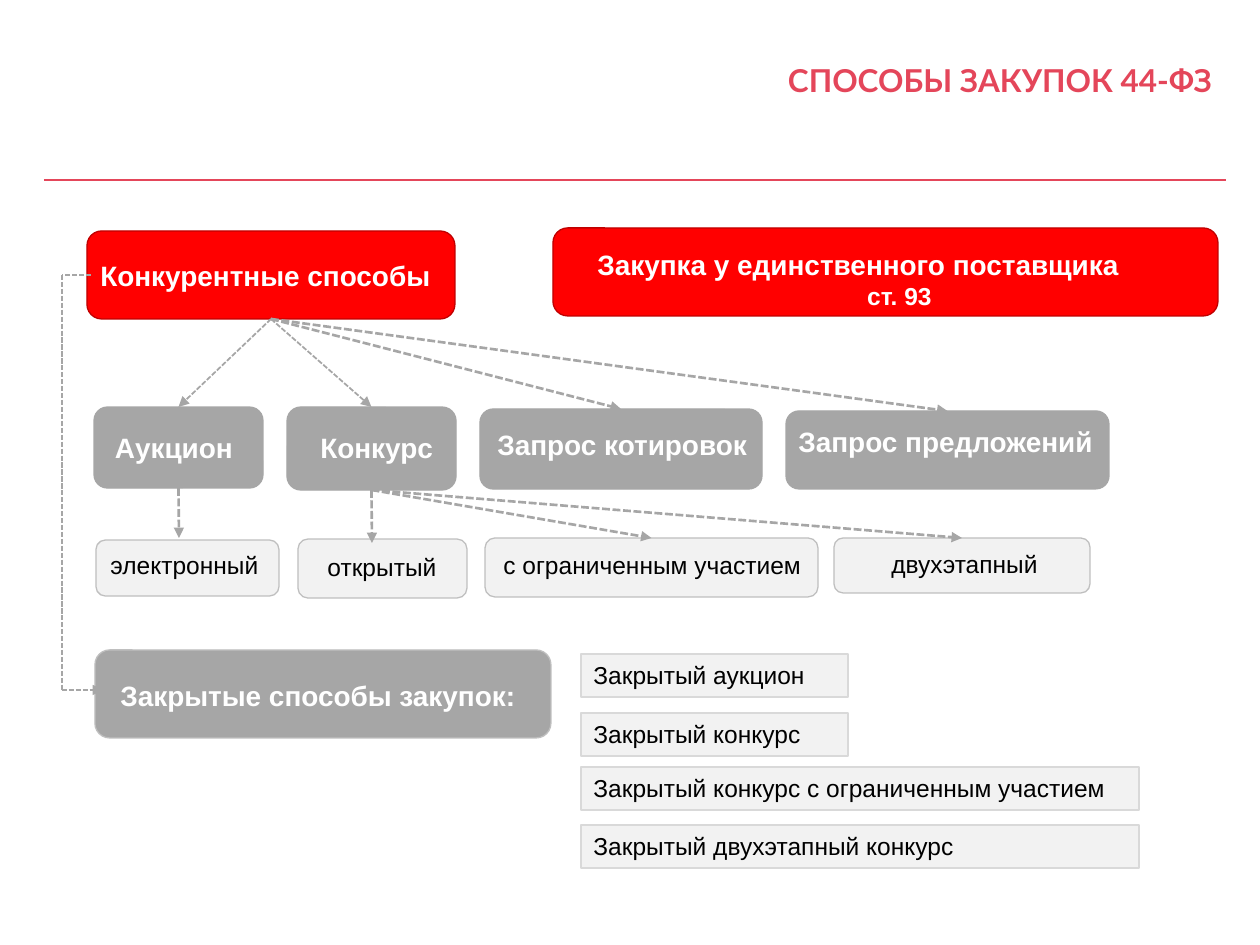
from dataclasses import dataclass
from typing import Optional

from lxml.etree import SubElement
from pptx import Presentation
from pptx.dml.color import RGBColor
from pptx.enum.dml import MSO_LINE_DASH_STYLE as DASH
from pptx.enum.shapes import MSO_CONNECTOR as CONN, MSO_SHAPE as SHAPE
from pptx.enum.text import MSO_ANCHOR as ANCHOR, PP_ALIGN as ALIGN
from pptx.oxml.ns import qn
from pptx.util import Emu, Pt

PX_PER_INCH = 126
COLORS = {
    "accent": "E4465A", "red": "FF0000", "dark_red": "C00000",
    "gray": "A6A6A6", "light": "F2F2F2", "edge": "BFBFBF",
    "pale_edge": "D9D9D9", "white": "FFFFFF", "black": "000000",
}
HEAD = {"name": "Arial", "size": Pt(16), "bold": True}
PLAIN = {"name": "Arial", "size": Pt(14), "bold": False}
TITLE = {"name": "Lato", "size": Pt(18), "bold": True}
TOP, LEFT, BOTTOM = 0, 1, 2

Rect = tuple[int, int, int, int]
Point = tuple[int, int]


@dataclass(frozen=True)
class Style:
    fill: str
    line: str
    color: str
    font: dict


RED = Style("red", "dark_red", "white", HEAD)
GRAY = Style("gray", "gray", "white", HEAD)
CLOSED = Style("gray", "edge", "white", HEAD)
LIGHT = Style("light", "edge", "black", PLAIN)
ITEM = Style("light", "pale_edge", "black", PLAIN)


@dataclass(frozen=True)
class Box:
    key: str
    text: str
    rect: Rect
    label: Rect
    style: Style
    align: ALIGN = ALIGN.LEFT
    note: str = ""


@dataclass(frozen=True)
class Link:
    """An end is either a point or the (key, side) of a box."""
    start: tuple
    end: tuple
    width: float = 1.5
    arrow: bool = True


BOXES = [
    Box("competitive", "Конкурентные способы", (87, 231, 368, 88), (88, 252, 367, 47), RED),
    Box("single", "Закупка у единственного поставщика", (553, 228, 665, 88),
        (585, 241, 629, 76), RED, note="ст. 93"),
    Box("auction", "Аукцион", (94, 407, 169, 81), (97, 424, 154, 47), GRAY, ALIGN.CENTER),
    Box("contest", "Конкурс", (287, 407, 169, 83), (308, 424, 149, 47), GRAY),
    Box("quotes", "Запрос котировок", (480, 409, 282, 80), (485, 421, 287, 47), GRAY),
    Box("proposals", "Запрос предложений", (786, 411, 323, 78), (786, 418, 323, 47), GRAY),
    Box("electronic", "электронный", (96, 540, 183, 56), (98, 544, 179, 44), LIGHT),
    Box("open", "открытый", (298, 539, 169, 59), (315, 546, 135, 42), LIGHT),
    Box("limited", "с ограниченным участием", (485, 538, 333, 59), (491, 544, 325, 43), LIGHT),
    Box("two_stage", "двухэтапный", (834, 538, 256, 55), (879, 543, 181, 43), LIGHT),
    Box("closed", "Закрытые способы закупок:", (95, 650, 456, 88), (108, 672, 433, 47), CLOSED),
]
CLOSED_ITEMS = [
    ("Закрытый аукцион", 654, 267),
    ("Закрытый конкурс", 713, 267),
    ("Закрытый конкурс с ограниченным участием", 767, 558),
    ("Закрытый двухэтапный конкурс", 825, 558),
]
LINKS = [
    Link(("competitive", BOTTOM), ("auction", TOP), 1),
    Link(("competitive", BOTTOM), ("contest", TOP), 1),
    Link(("competitive", BOTTOM), ("quotes", TOP)),
    Link(("competitive", BOTTOM), ("proposals", TOP)),
    Link(("auction", BOTTOM), (179, 538)),
    Link(("contest", BOTTOM), (372, 543)),
    Link(("contest", BOTTOM), ("limited", TOP)),
    Link(("contest", BOTTOM), ("two_stage", TOP)),
    Link((91, 275), (62, 275), 1, False),
    Link((62, 275), (62, 690), 1, False),
    Link((62, 690), (103, 690), 1),
]


def px(n: int) -> Emu:
    return Emu(round(n * 914400 / PX_PER_INCH))


def rgb(name: str) -> RGBColor:
    return RGBColor.from_string(COLORS[name])


def write(tf, text: str, font: dict, color: str, align=ALIGN.LEFT, first: bool = True):
    """Write one paragraph, the first of the frame or a further one."""
    tf.word_wrap = True
    tf.vertical_anchor = ANCHOR.TOP
    p = tf.paragraphs[0] if first else tf.add_paragraph()
    p.alignment = align
    r = p.add_run()
    r.text = text
    for attr, value in font.items():
        setattr(r.font, attr, value)
    r.font.color.rgb = rgb(color)
    return p


def add_panel(s, kind: SHAPE, rect: Rect, fill: str, line: Optional[str] = None):
    sp = s.shapes.add_shape(kind, *map(px, rect))
    sp.shadow.inherit = False
    sp.fill.solid()
    sp.fill.fore_color.rgb = rgb(fill)
    if line:
        sp.line.color.rgb = rgb(line)
        sp.line.width = Pt(0.75)
    else:
        sp.line.fill.background()
    return sp


def add_box(s, box: Box):
    style = box.style
    sp = add_panel(s, SHAPE.ROUNDED_RECTANGLE, box.rect, style.fill, style.line)
    tf = s.shapes.add_textbox(*map(px, box.label)).text_frame
    write(tf, box.text, style.font, style.color, box.align)
    if box.note:
        write(tf, box.note, {**style.font, "size": Pt(14)}, style.color, ALIGN.CENTER, False)
    return sp


def add_line(s, start: Point, end: Point, color: str, width: float):
    cn = s.shapes.add_connector(CONN.STRAIGHT, *map(px, start + end))
    cn.line.color.rgb = rgb(color)
    cn.line.width = Pt(width)
    SubElement(cn._element.spPr, qn("a:effectLst"))
    return cn


def add_link(s, link: Link, shapes: dict) -> None:
    points = [(0, 0) if end[0] in shapes else end for end in (link.start, link.end)]
    cn = add_line(s, *points, "gray", link.width)
    for end, connect in ((link.start, cn.begin_connect), (link.end, cn.end_connect)):
        if end[0] in shapes:
            connect(shapes[end[0]], end[1])
    cn.line.dash_style = DASH.SQUARE_DOT
    if link.arrow:
        SubElement(cn.line._get_or_add_ln(), qn("a:tailEnd"), type="triangle")


def main() -> None:
    prs = Presentation()
    prs.slide_width, prs.slide_height = px(1260), px(945)
    s = prs.slides.add_slide(prs.slide_layouts[6])

    add_line(s, (44, 180), (1226, 180), "accent", 1.5)
    title = add_panel(s, SHAPE.RECTANGLE, (757, 47, 486, 59), "white")
    p = write(title.text_frame, "СПОСОБЫ ЗАКУПОК 44-ФЗ", TITLE, "accent", ALIGN.CENTER)
    p.line_spacing = 1.2

    shapes = {box.key: add_box(s, box) for box in BOXES}
    for text, top, width in CLOSED_ITEMS:
        sp = add_panel(s, SHAPE.RECTANGLE, (581, top, width, 43), ITEM.fill, ITEM.line)
        write(sp.text_frame, text, ITEM.font, ITEM.color)
    for link in LINKS:
        add_link(s, link, shapes)

    prs.save("out.pptx")


if __name__ == "__main__":
    main()
